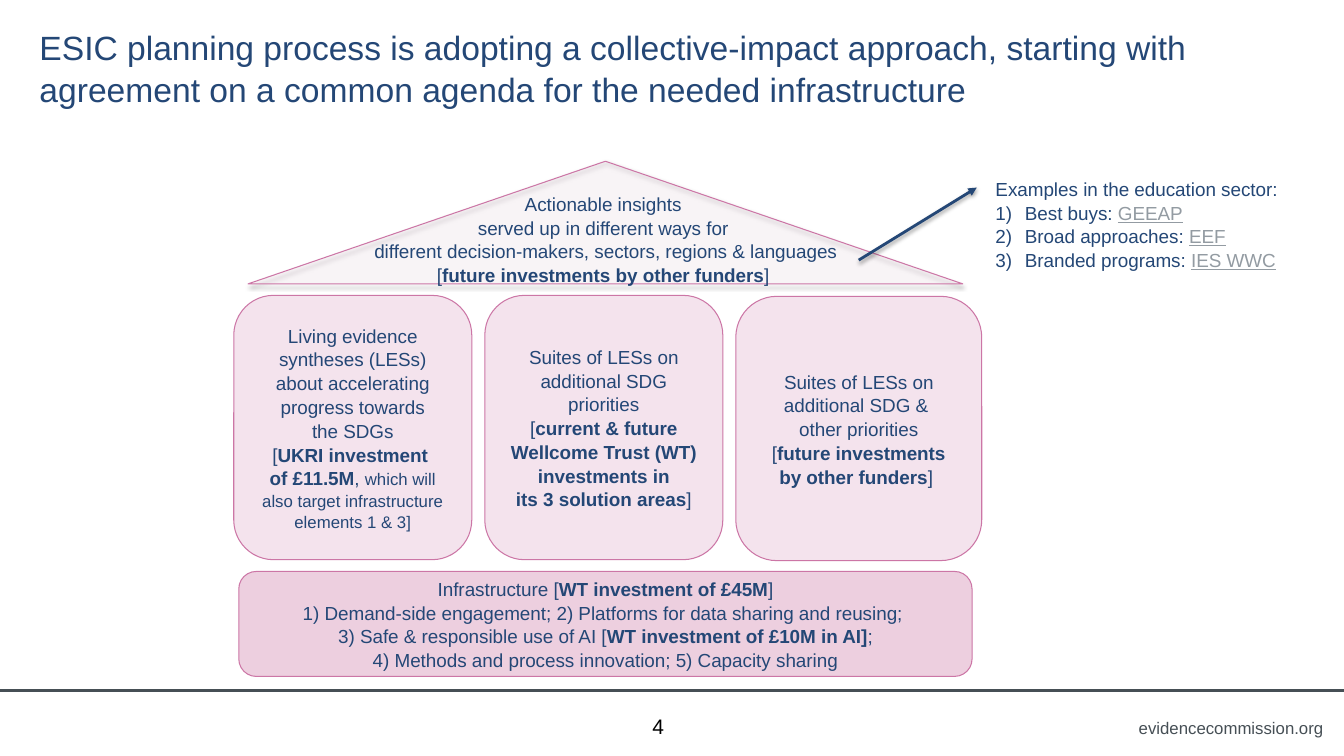
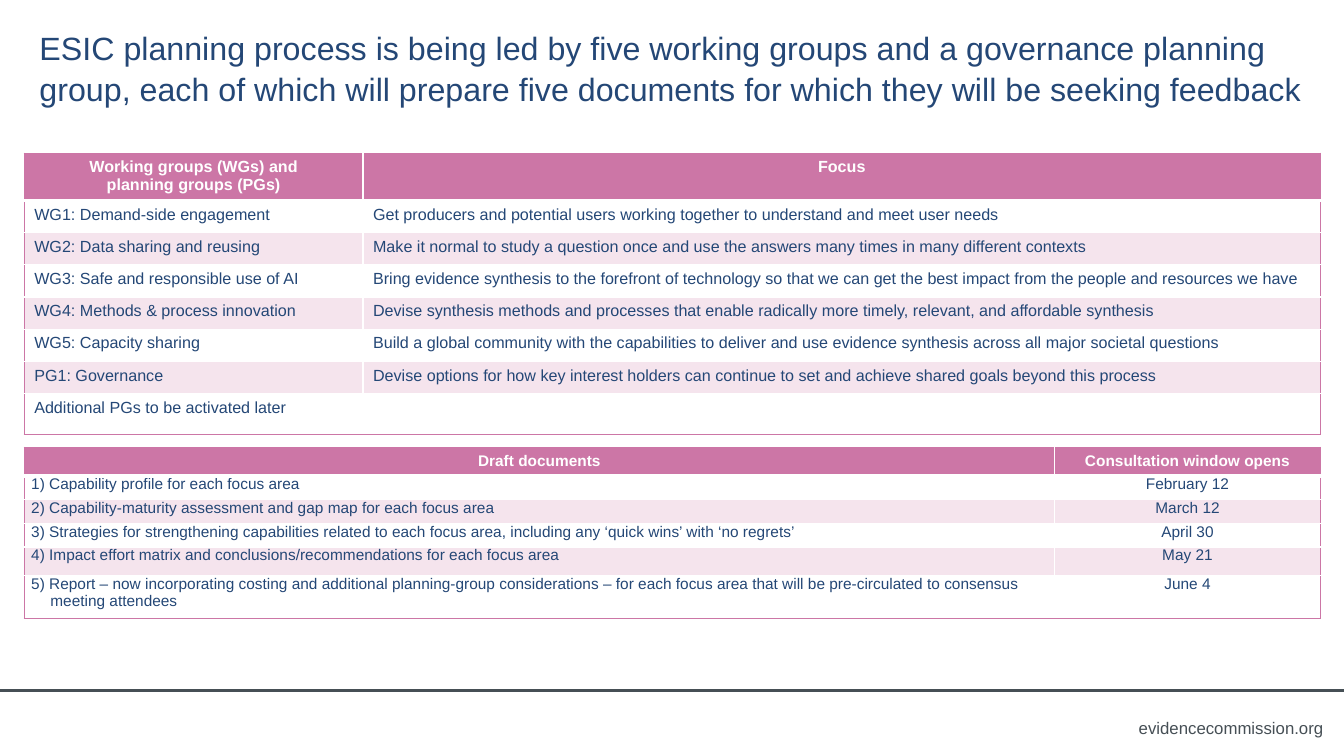
from dataclasses import dataclass

from lxml import etree
from pptx import Presentation
from pptx.dml.color import RGBColor
from pptx.enum import dml, shapes, text
from pptx.oxml.ns import qn
from pptx.util import Pt


@dataclass(frozen=True)
class Theme:
    font: str = "Arial"
    navy: str = "244776"
    pink: str = "CC76A6"
    tint: str = "F5E4ED"
    white: str = "FFFFFF"
    black: str = "000000"
    slate: str = "464F55"
    grey: str = "939BA2"
    title: float = 24
    long_title: float = 23
    body: float = 13.5
    small: float = 12
    number: float = 15
    groups: float = 11.5
    documents: float = 11
    spacing: float = 1.05


THEME = Theme()
STYLES = {
    "bold": {"bold": True},
    "small": {"size": THEME.small},
    "link": {"color": THEME.grey, "underline": True},
}
LEFT, CENTER, RIGHT = text.PP_ALIGN.LEFT, text.PP_ALIGN.CENTER, text.PP_ALIGN.RIGHT
MIDDLE = text.MSO_ANCHOR.MIDDLE
SLIDE_SIZE = (960, 540)
TITLE_BOX = (21, 8.5, 921.5, 79)
FOOTER_RULE_Y = 493.2
FOOTER = "evidencecommission.org"

AGENDA_TITLE = ("ESIC planning process is adopting a collective-impact approach, starting with "
                "agreement on a common agenda for the needed infrastructure")
GROUPS_TITLE = ("ESIC planning process is being led by five working groups and a governance planning "
                "group, each of which will prepare five documents for which they will be seeking feedback")
PAGE_NUMBER = "4"

ROOF = [
    ["Actionable insights \nserved up in different ways for \n"
     "different decision-makers, sectors, regions & languages"],
    ["[", ("future investments by other funders", "bold"), "] "],
]
PILLARS = [
    (170, 211, [
        ["Living evidence syntheses (LESs)"],
        ["about accelerating progress towards\nthe SDGs"],
        ["[", ("UKRI investment \nof £11.5M", "bold"), ", ",
         ("which will also target infrastructure elements 1 & 3]", "small")],
    ]),
    (170, 211, [
        ["Suites of LESs on additional SDG priorities"],
        ["[", ("current & future Wellcome Trust (WT) investments in\nits 3 solution areas", "bold"), "]"],
    ]),
    (175.7, 211.7, [
        ["Suites of LESs on additional SDG & \nother priorities"],
        ["[", ("future investments\nby other funders", "bold"), "] "],
    ]),
]
FOUNDATION = [
    ["Infrastructure [", ("WT investment of £45M", "bold"),
     "]\n1) Demand-side engagement; 2) Platforms for data sharing and reusing; \n"
     "3) Safe & responsible use of AI [", ("WT investment of £10M in AI]", "bold"), ";"],
    ["4) Methods and process innovation; 5) Capacity sharing"],
]
EXAMPLES_HEADING = "Examples in the education sector:"
EXAMPLES = [("Best buys: ", "GEEAP"), ("Broad approaches: ", "EEF"), ("Branded programs: ", "IES WWC")]

GROUPS = [
    ("Working groups (WGs) and\nplanning groups (PGs)", "Focus"),
    ("WG1: Demand-side engagement",
     "Get producers and potential users working together to understand and meet user needs"),
    ("WG2: Data sharing and reusing",
     "Make it normal to study a question once and use the answers many times in many different contexts"),
    ("WG3: Safe and responsible use of AI",
     "Bring evidence synthesis to the forefront of technology so that we can get the best impact "
     "from the people and resources we have"),
    ("WG4: Methods & process innovation",
     "Devise synthesis methods and processes that enable radically more timely, relevant, "
     "and affordable synthesis"),
    ("WG5: Capacity sharing",
     "Build a global community with the capabilities to deliver and use evidence synthesis "
     "across all major societal questions"),
    ("PG1: Governance",
     "Devise options for how key interest holders can continue to set and achieve shared goals "
     "beyond this process"),
    ("Additional PGs to be activated later", ""),
]
DOCUMENTS = [
    ("Draft documents", "Consultation window opens"),
    ("1) Capability profile for each focus area", "February 12"),
    ("2) Capability-maturity assessment and gap map for each focus area", "March 12"),
    ("3) Strategies for strengthening capabilities related to each focus area, including any "
     "‘quick wins’ with ‘no regrets’", "April 30"),
    ("4) Impact effort matrix and conclusions/recommendations for each focus area", "May 21"),
    ("5) Report – now incorporating costing and additional planning-group considerations – for each "
     "focus area that will be pre-circulated to consensus meeting attendees", "June 4"),
]


def rgb(value):
    return RGBColor.from_string(value)


def points(values):
    return [Pt(value) for value in values]


def child(parent, tag, **attributes):
    return etree.SubElement(parent, qn(tag), {key: str(value) for key, value in attributes.items()})


def write(frame, paragraphs, size=THEME.body, color=THEME.navy, align=LEFT, bold=False,
          spacing=None, after=None, hanging=0, numbered_from=None):
    if isinstance(paragraphs, str):
        paragraphs = [[paragraphs]]
    for index, runs in enumerate(paragraphs):
        paragraph = frame.paragraphs[0] if index == 0 else frame.add_paragraph()
        paragraph.alignment = align
        if spacing:
            paragraph.line_spacing = spacing
        if after is not None:
            paragraph.space_after = Pt(after)
        numbered = numbered_from is not None and index >= numbered_from
        if hanging and (numbered or numbered_from is None):
            properties = paragraph._p.get_or_add_pPr()
            properties.set("marL", str(Pt(hanging)))
            properties.set("indent", str(-Pt(hanging)))
            if numbered:
                child(properties, "a:buFont", typeface="+mj-lt")
                child(properties, "a:buAutoNum", type="arabicParenR")
        for item in runs:
            words, style = (item, None) if isinstance(item, str) else item
            look = {"size": size, "color": color, "bold": bold, "underline": False, **STYLES.get(style, {})}
            for number, line in enumerate(words.split("\n")):
                if number:
                    paragraph.add_line_break()
                if not line:
                    continue
                run = paragraph.add_run()
                run.text = line
                font = run.font
                font.name, font.size = THEME.font, Pt(look["size"])
                font.bold, font.underline = look["bold"], look["underline"]
                font.color.rgb = rgb(look["color"])


def add_label(slide, box, paragraphs, wrap=True, inset=None, **format):
    label = slide.shapes.add_textbox(*points(box))
    frame = label.text_frame
    frame.word_wrap = wrap
    frame.auto_size = text.MSO_AUTO_SIZE.SHAPE_TO_FIT_TEXT
    if inset is not None:
        frame.margin_left = frame.margin_right = frame.margin_top = frame.margin_bottom = Pt(inset)
    write(frame, paragraphs, **format)
    return label


def add_shadow(effects, alpha, blur, distance):
    shadow = child(effects, "a:outerShdw", blurRad=Pt(blur), dist=Pt(distance), dir=90 * 60000,
                   algn="t", rotWithShape=0)
    child(child(shadow, "a:srgbClr", val=THEME.black), "a:alpha", val=alpha * 1000)


def add_block(slide, preset, box, opacity, paragraphs=()):
    block = slide.shapes.add_shape(preset, *points(box))
    block.fill.solid()
    block.fill.fore_color.rgb = rgb(THEME.pink)
    child(block.element.spPr.find(qn("a:solidFill"))[0], "a:alpha", val=opacity * 1000)
    block.line.color.rgb = rgb(THEME.pink)
    block.line.width = Pt(0.75)
    block.shadow.inherit = False
    block.text_frame.word_wrap = True
    block.text_frame.vertical_anchor = MIDDLE
    write(block.text_frame, paragraphs, align=CENTER, spacing=THEME.spacing)
    return block


def add_line(slide, start, end, color, arrow=False):
    line = slide.shapes.add_connector(shapes.MSO_CONNECTOR.STRAIGHT, *points(start + end))
    line.line.color.rgb = rgb(color)
    line.line.width = Pt(2)
    line.line.dash_style = dml.MSO_LINE.SOLID
    properties = line.element.spPr
    if arrow:
        child(properties.find(qn("a:ln")), "a:tailEnd", type="triangle")
    effects = child(properties, "a:effectLst")
    if arrow:
        add_shadow(effects, 38, 3.1, 1.6)
    return line


def add_slide(prs, title, size):
    slide = prs.slides.add_slide(prs.slide_layouts[5])
    frame = slide.shapes.title.text_frame
    frame.vertical_anchor = MIDDLE
    frame.auto_size = text.MSO_AUTO_SIZE.NONE
    write(frame, title, size=size, spacing=THEME.spacing)
    return slide


def share_footer(prs, slide):
    rule = add_line(slide, (0, FOOTER_RULE_Y), (SLIDE_SIZE[0], FOOTER_RULE_Y), THEME.slate)
    site = add_label(slide, (804, 509, 148.5, 21.6), FOOTER, size=THEME.small,
                     color=THEME.slate, align=RIGHT, after=2)
    for number, part in enumerate((rule, site), 20):
        part.element.xpath(".//p:cNvPr")[0].set("id", str(number))
        prs.slide_master.shapes.element.append(part.element)


def add_borders(cell, row, column, last_row, last_column):
    edges = [
        ("a:lnL", column == 0, 1),
        ("a:lnR", column == last_column, 1),
        ("a:lnT", row == 0, 3 if row == 1 else 1),
        ("a:lnB", row == last_row, 3 if row == 0 else 1),
    ]
    for tag, outer, width in edges:
        border = child(cell._tc.get_or_add_tcPr(), tag, w=Pt(width))
        child(child(border, "a:solidFill"), "a:srgbClr", val=THEME.pink if outer else THEME.white)


def add_grid(slide, top, rows, widths, heights, size, aligns, compact=False):
    box = (17.3, top, sum(widths), sum(heights))
    table = slide.shapes.add_table(len(rows), len(widths), *points(box)).table
    for column, width in zip(table.columns, widths):
        column.width = Pt(width)
    for r, (entries, height) in enumerate(zip(rows, heights)):
        table.rows[r].height = Pt(height)
        for c, entry in enumerate(entries):
            cell = table.cell(r, c)
            add_borders(cell, r, c, len(rows) - 1, len(widths) - 1)
            cell.fill.solid()
            cell.fill.fore_color.rgb = rgb(THEME.pink if r == 0 else THEME.white if r % 2 else THEME.tint)
            if compact:
                cell.margin_left = cell.margin_right = Pt(5)
                cell.margin_top = cell.margin_bottom = 0
                if r == 0:
                    cell.vertical_anchor = MIDDLE
            listed = compact and r > 0 and c == 0
            write(cell.text_frame, entry, size=size, bold=r == 0,
                  color=THEME.navy if r else THEME.white, align=aligns[c] if r else CENTER,
                  after=3 if listed else None, hanging=13.7 if listed else 0)


def build_agenda(prs):
    slide = add_slide(prs, AGENDA_TITLE, THEME.title)
    share_footer(prs, slide)
    add_label(slide, (466, 504, 28, 28.8), PAGE_NUMBER, inset=0, size=THEME.number,
              color=THEME.black).text_frame.vertical_anchor = MIDDLE
    rounded = shapes.MSO_SHAPE.ROUNDED_RECTANGLE
    add_block(slide, rounded, (170.6, 408.2, 523.8, 75), 35, FOUNDATION)
    left, gap = 167, 9.3
    for width, top, paragraphs in PILLARS:
        add_block(slide, rounded, (left, top, width, 188.8), 20, paragraphs)
        left += width + gap
    roof = add_block(slide, shapes.MSO_SHAPE.ISOSCELES_TRIANGLE, (177.2, 115.2, 510.5, 87.6), 5)
    add_shadow(roof.element.spPr.find(qn("a:effectLst")), 35, 3.1, 1.8)
    add_label(slide, (252, 133.2, 361.4, 92.2), ROOF, wrap=False, align=CENTER, spacing=THEME.spacing)
    examples = [[EXAMPLES_HEADING]] + [[kind, (source, "link")] for kind, source in EXAMPLES]
    add_label(slide, (704, 122.4, 232, 75), examples, spacing=THEME.spacing, hanging=21, numbered_from=1)
    add_line(slide, (613.4, 185.8), (697.7, 134), THEME.navy, arrow=True)


def build_groups(prs):
    slide = add_slide(prs, GROUPS_TITLE, THEME.long_title)
    add_grid(slide, 109.4, GROUPS, (242, 684), [33.8] + [23] * 7, THEME.groups, (LEFT, LEFT))
    add_grid(slide, 319.6, DOCUMENTS, (736, 190), (20.2, 17, 17, 17, 20.2, 31), THEME.documents,
             (LEFT, CENTER), compact=True)


def main():
    prs = Presentation()
    prs.slide_width, prs.slide_height = points(SLIDE_SIZE)
    heading = prs.slide_layouts[5].placeholders[0]
    heading.left, heading.top, heading.width, heading.height = points(TITLE_BOX)
    build_agenda(prs)
    build_groups(prs)
    prs.save("out.pptx")


if __name__ == "__main__":
    main()
